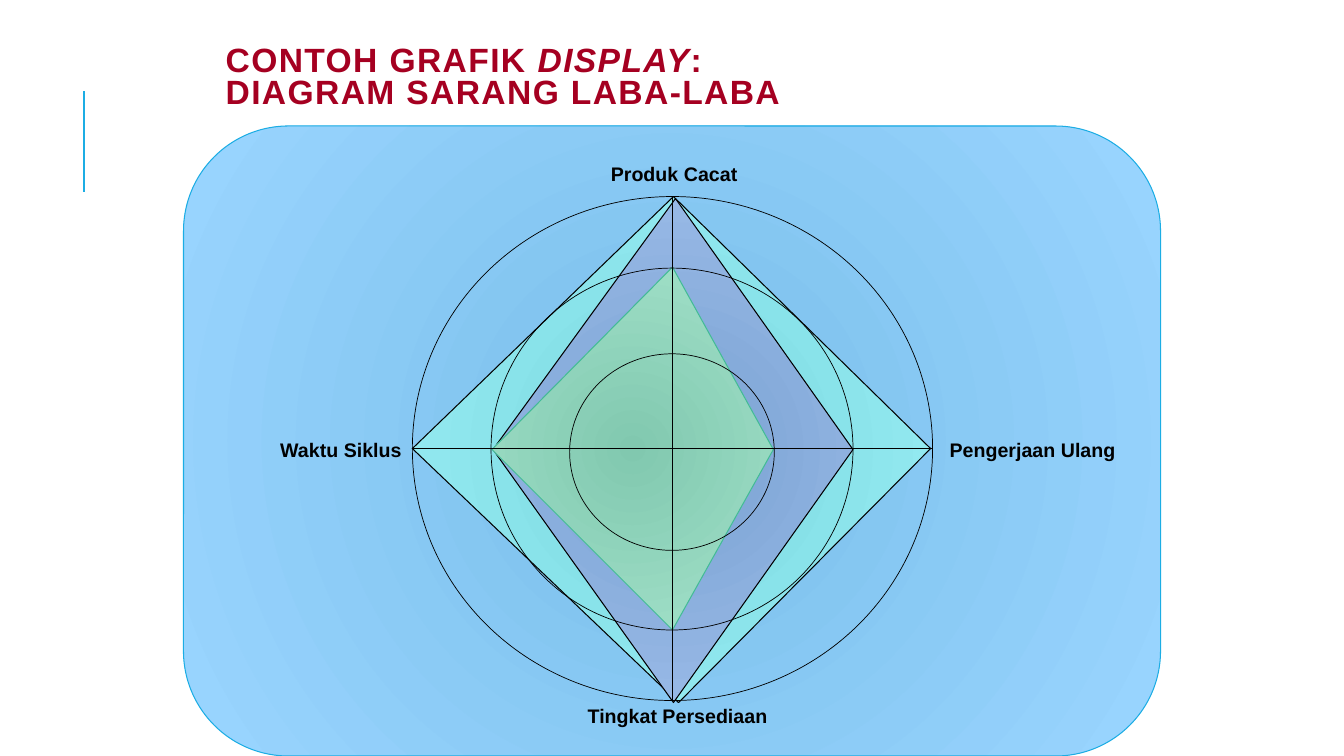
from lxml import etree
from pptx import Presentation
from pptx.dml.color import RGBColor
from pptx.enum.shapes import MSO_CONNECTOR, MSO_SHAPE
from pptx.enum.text import MSO_ANCHOR, MSO_AUTO_SIZE
from pptx.oxml.ns import qn
from pptx.util import Pt

PX = 9144
SLIDE_SIZE = (1333, 750)
FONT, BLACK, ACCENT = "Arial", "000000", "1CADE4"

TITLE_LINES = [
    [("CONTOH GRAFIK ", False), ("DISPLAY", True), (":", False)],
    [("DIAGRAM SARANG LABA-LABA", False)],
]
TITLE_BOX, TITLE_COLOR = (214, 16, 900, 125), "A50021"
PANEL_BOX, PANEL_GRADIENT = (182, 125, 969, 625), ("78BEE9", "9AD5FF")
DIAMONDS = [
    ([(409, 445), (668, 195), (923, 445), (673, 697)], ("79D7DE", "9CF0F7"), BLACK),
    ([(670, 197), (489, 446), (668, 697), (846, 446)], ("79A1D1", "9EBEEB"), BLACK),
    ([(488, 446), (667, 265), (767, 446), (667, 625)], ("81C8AF", "A4E3CB"), "42BA97"),
]
AXIS_LABELS = [
    ("Produk Cacat", (596, 156, 146, 34)),
    ("Waktu Siklus", (268, 430, 141, 34)),
    ("Tingkat Persediaan", (573, 693, 199, 34)),
    ("Pengerjaan Ulang", (932, 430, 186, 34)),
]
RINGS = [(409, 195, 516, 500), (487, 266, 359, 359), (565, 351, 203, 195)]
AXES = [(409, 445, 924, 445), (667, 195, 667, 695)]
ACCENT_LINE = (83, 190, 83, 90)


def emu(lengths):
    return [length * PX for length in lengths]


def rgb(color):
    return RGBColor.from_string(color)


def set_line(part, color, width):
    part.line.color.rgb = rgb(color)
    part.line.width = Pt(width)


def set_radial_fill(part, gradient):
    part.fill.gradient()
    for stop, color in zip(part.fill.gradient_stops, gradient):
        stop.color.rgb = rgb(color)
    grad_fill = part._element.spPr.find(qn("a:gradFill"))
    grad_fill.remove(grad_fill.find(qn("a:lin")))
    radial = etree.SubElement(grad_fill, qn("a:path"), {"path": "circle"})
    etree.SubElement(radial, qn("a:fillToRect"), dict.fromkeys("ltrb", "100000"))


def set_font(run, size, color):
    run.font.name, run.font.size, run.font.bold = FONT, Pt(size), True
    run.font.color.rgb = rgb(color)


def add_line(slide, ends, color, width):
    line = slide.shapes.add_connector(MSO_CONNECTOR.STRAIGHT, *emu(ends))
    set_line(line, color, width)
    etree.SubElement(line._element.spPr, qn("a:effectLst"))


def add_title(slide):
    frame = slide.shapes.add_textbox(*emu(TITLE_BOX)).text_frame
    frame.word_wrap = True
    frame.vertical_anchor = MSO_ANCHOR.MIDDLE
    heading = frame.paragraphs[0]
    heading.line_spacing = 0.8
    for number, pieces in enumerate(TITLE_LINES):
        if number:
            heading.add_line_break()
        for words, italic in pieces:
            run = heading.add_run()
            run.text = words
            set_font(run, 24, TITLE_COLOR)
            run.font.italic = italic
            run.font._element.set("spc", "100")


def add_panel(slide):
    panel = slide.shapes.add_shape(MSO_SHAPE.ROUNDED_RECTANGLE, *emu(PANEL_BOX))
    panel.shadow.inherit = False
    set_radial_fill(panel, PANEL_GRADIENT)
    set_line(panel, ACCENT, 0.75)


def add_diamond(slide, corners, gradient, outline):
    builder = slide.shapes.build_freeform(*corners[0], scale=PX)
    builder.add_line_segments(corners[1:], close=True)
    diamond = builder.convert_to_shape()
    diamond.shadow.inherit = False
    set_radial_fill(diamond, gradient)
    set_line(diamond, outline, 0.75)


def add_label(slide, caption, box):
    frame = slide.shapes.add_textbox(*emu(box)).text_frame
    frame.word_wrap = False
    frame.auto_size = MSO_AUTO_SIZE.SHAPE_TO_FIT_TEXT
    frame.text = caption
    set_font(frame.paragraphs[0].runs[0], 14, BLACK)


def add_ring(slide, box):
    ring = slide.shapes.add_shape(MSO_SHAPE.OVAL, *emu(box))
    ring.shadow.inherit = False
    ring.fill.background()
    set_line(ring, BLACK, 0.5)


def main():
    """Build the spider diagram slide and save it."""
    deck = Presentation()
    deck.slide_width, deck.slide_height = emu(SLIDE_SIZE)
    slide = deck.slides.add_slide(deck.slide_layouts[6])
    add_line(slide, ACCENT_LINE, ACCENT, 1.5)
    add_panel(slide)
    add_title(slide)
    for corners, gradient, outline in DIAMONDS:
        add_diamond(slide, corners, gradient, outline)
    for caption, box in AXIS_LABELS:
        add_label(slide, caption, box)
    for box in RINGS:
        add_ring(slide, box)
    for ends in AXES:
        add_line(slide, ends, BLACK, 0.5)
    deck.save("out.pptx")


if __name__ == "__main__":
    main()
